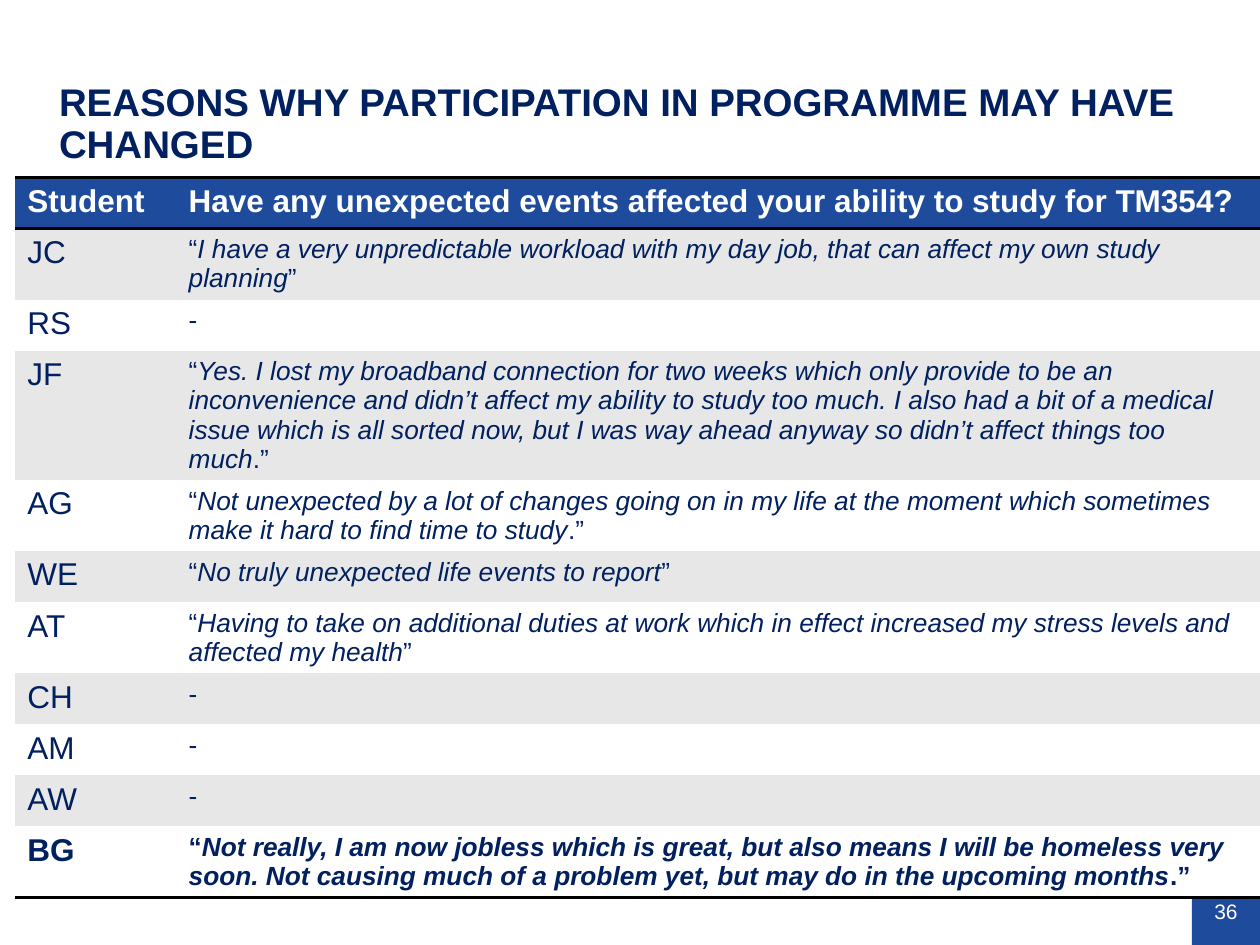
import pptx
import pptx.util
import pptx.dml.color
import pptx.enum.shapes
import pptx.enum.text
import pptx.oxml

Cm = pptx.util.Cm
NAVY, BLUE, WHITE, GREY, BLACK = "002060", "1E4B9B", "FFFFFF", "E7E7E7", "000000"
PLAIN = "{2D5ABB26-0587-4C30-8999-92F81FD0307C}"
SPACE = "http://schemas.openxmlformats.org/drawingml/2006/main"
HEADS = ("Student", "Have any unexpected events affected your ability to study for TM354?")
ROWS = [
    ("JC", "I have a very unpredictable workload with my day job, that can affect my own study planning", "”"),
    ("RS", "", ""),
    ("JF", "Yes. I lost my broadband connection for two weeks which only provide to be an "
           "inconvenience and didn’t affect my ability to study too much. I also had a bit of a "
           "medical issue which is all sorted now, but I was way ahead anyway so didn’t affect "
           "things too much", ".”"),
    ("AG", "Not unexpected by a lot of changes going on in my life at the moment which sometimes "
           "make it hard to find time to study", ".”"),
    ("WE", "No truly unexpected life events to report", "”"),
    ("AT", "Having to take on additional duties at work which in effect increased my stress "
           "levels and affected my health", "”"),
    ("CH", "", ""),
    ("AM", "", ""),
    ("AW", "", ""),
    ("BG", "Not really, I am now jobless which is great, but also means I will be homeless very "
           "soon. Not causing much of a problem yet, but may do in the upcoming months", ".”"),
]


def paint(fmt, shade):
    if hasattr(fmt, "solid"):
        fmt.solid()
        fmt = fmt.fore_color
    fmt.rgb = pptx.dml.color.RGBColor.from_string(shade)


def write(para, text, size, shade, bold=False, slant=False):
    run = para.add_run()
    run.text = text
    font = run.font
    font.name, font.size = "Arial", pptx.util.Pt(size)
    font.bold, font.italic = bold, slant
    paint(font.color, shade)


def rule(cell, sides):
    props = cell._tc.get_or_add_tcPr()
    for spot, side in enumerate(sides):
        props.insert(spot, pptx.oxml.parse_xml(
            f'<a:ln{side} xmlns:a="{SPACE}" w="25400"><a:solidFill>'
            f'<a:srgbClr val="{BLACK}"/></a:solidFill></a:ln{side}>'))


def add_title(slide, left, top, width, height):
    title = slide.shapes.title
    title.left, title.top, title.width, title.height = map(Cm, (left, top, width, height))
    frame = title.text_frame
    frame.word_wrap = True
    frame.auto_size = pptx.enum.text.MSO_AUTO_SIZE.NONE
    frame.vertical_anchor = pptx.enum.text.MSO_ANCHOR.MIDDLE
    frame.margin_left, frame.margin_top = Cm(0.1), Cm(0.05)
    frame.margin_right = frame.margin_bottom = 0
    para = frame.paragraphs[0]
    para.alignment = pptx.enum.text.PP_ALIGN.LEFT
    para.line_spacing = 0.9
    write(para, "REASONS WHY PARTICIPATION IN PROGRAMME MAY HAVE CHANGED", 22, NAVY, True)


def add_page(slide, left, top, side):
    box = slide.shapes.add_shape(pptx.enum.shapes.MSO_SHAPE.RECTANGLE,
                                 Cm(left), Cm(top), Cm(side), Cm(side))
    box.shadow.inherit = False
    paint(box.fill, BLUE)
    box.line.fill.background()
    frame = box.text_frame
    frame.margin_left = frame.margin_top = frame.margin_right = frame.margin_bottom = 0
    frame.vertical_anchor = pptx.enum.text.MSO_ANCHOR.MIDDLE
    para = frame.paragraphs[0]
    para.alignment = pptx.enum.text.PP_ALIGN.CENTER
    write(para, "36", 12, WHITE)


def add_quotes(slide, left, top, width, first, step):
    count = len(ROWS) + 1
    table = slide.shapes.add_table(count, 2, Cm(left), Cm(top),
                                   Cm(width), Cm(step * count)).table
    table._tbl.tblPr[0].text = PLAIN
    table.horz_banding = False
    table.columns[0].width, table.columns[1].width = Cm(first), Cm(width - first)
    for row in table.rows:
        row.height = Cm(step)
    for col, head in enumerate(HEADS):
        cell = table.cell(0, col)
        paint(cell.fill, BLUE)
        rule(cell, "TB")
        write(cell.text_frame.paragraphs[0], head, 18, WHITE, True)
    for num, (name, quote, close) in enumerate(ROWS, 1):
        last = num == len(ROWS)
        cells = [table.cell(num, col) for col in range(2)]
        for cell in cells:
            paint(cell.fill, GREY if num % 2 else WHITE)
            if last:
                rule(cell, "B")
        label, words = (cell.text_frame.paragraphs[0] for cell in cells)
        write(label, name, 18, NAVY, last)
        if quote:
            write(words, "“", 15, NAVY, last)
            write(words, quote, 15, NAVY, last, True)
            write(words, close, 15, NAVY, last)
        else:
            write(words, "-", 15, NAVY)


def main():
    deck = pptx.Presentation()
    deck.slide_width, deck.slide_height = Cm(25.4), Cm(19.05)
    slide = deck.slides.add_slide(deck.slide_layouts[5])
    add_page(slide, 24.03, 17.68, 1.37)
    add_title(slide, 1.09, 2.21, 23.88, 0.58)
    add_quotes(slide, 0.3, 3.58, 25.11, 3.25, 1.03)
    deck.save("out.pptx")


if __name__ == "__main__":
    main()
